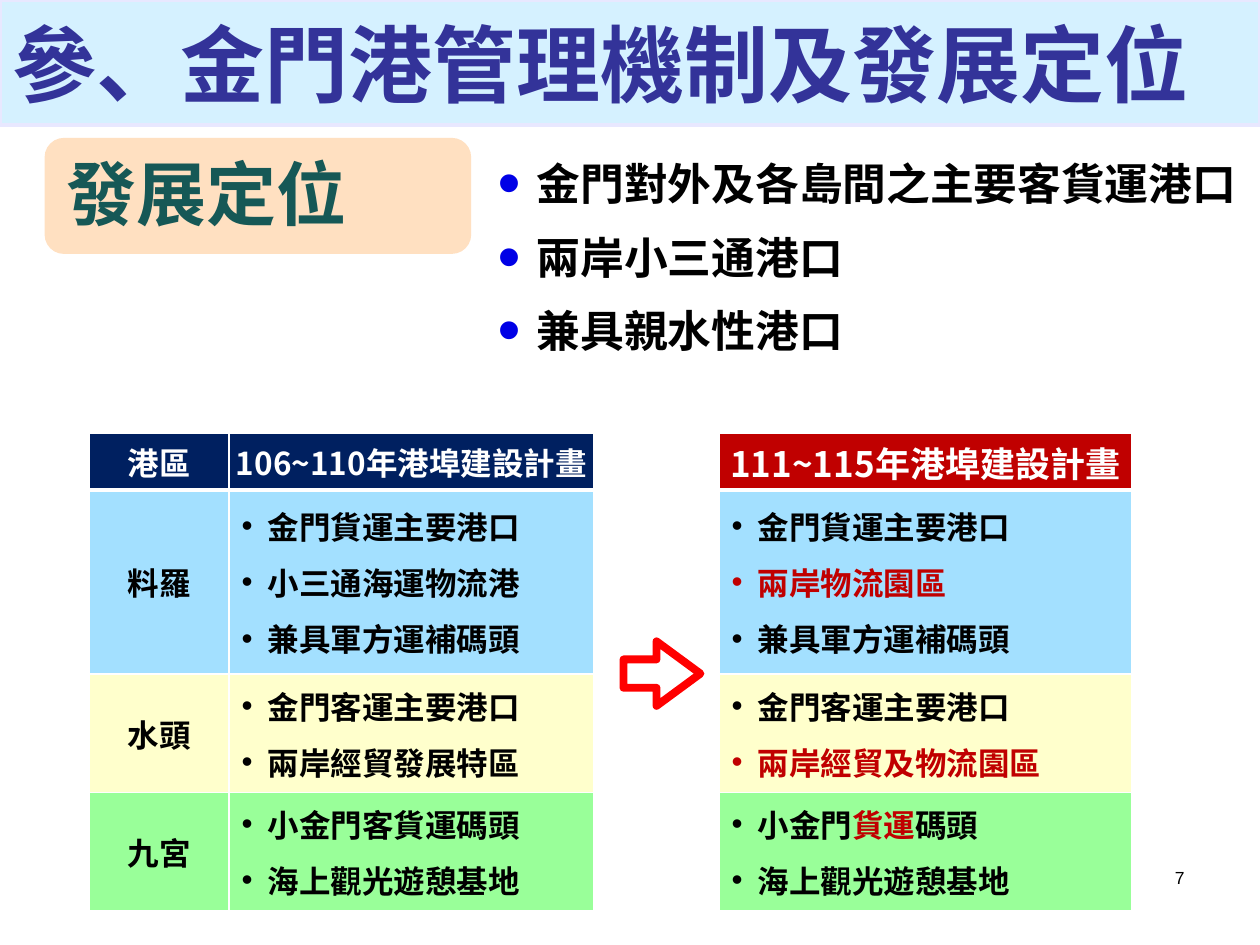
from lxml.etree import SubElement
from pptx import Presentation
from pptx.dml.color import RGBColor
from pptx.enum.shapes import MSO_SHAPE
from pptx.enum.text import MSO_ANCHOR, MSO_AUTO_SIZE, PP_ALIGN
from pptx.oxml.ns import qn
from pptx.util import Cm, Pt

COLORS = {
    "black": "000000", "white": "FFFFFF", "red": "C00000", "navy": "002060",
    "title": "333399", "banner": "66CCFF", "banner_edge": "E8E8FF",
    "heading": "165856", "orange": "FF9933", "bullet": "0000E6",
    "arrow": "FF0000", "blue": "A3E0FF", "yellow": "FFFFCC", "green": "99FF99",
}
CJK = "Noto Sans CJK SC"

PORTS = [
    ("料羅", "blue",
     ["金門貨運主要港口", "小三通海運物流港", "兼具軍方運補碼頭"],
     ["金門貨運主要港口", "*兩岸物流園區", "兼具軍方運補碼頭"]),
    ("水頭", "yellow",
     ["金門客運主要港口", "兩岸經貿發展特區"],
     ["金門客運主要港口", "*兩岸經貿及物流園區"]),
    ("九宮", "green",
     ["小金門客貨運碼頭", "海上觀光遊憩基地"],
     ["小金門*貨運*碼頭", "海上觀光遊憩基地"]),
]


class Deck:
    def __init__(self):
        self.prs = Presentation()
        self.prs.slide_width, self.prs.slide_height = Cm(25.4), Cm(19.05)
        self.slide = self.prs.slides.add_slide(self.prs.slide_layouts[1])

    def rgb(self, name):
        return RGBColor.from_string(COLORS[name])

    def place(self, shape, left, top, width, height):
        shape.left, shape.top = Cm(left), Cm(top)
        shape.width, shape.height = Cm(width), Cm(height)

    def fill(self, target, color, opacity=100):
        target.fill.solid()
        target.fill.fore_color.rgb = self.rgb(color)
        if opacity < 100:
            tint = target._element.spPr.find(qn("a:solidFill"))[0]
            SubElement(tint, qn("a:alpha"), val=str(opacity * 1000))

    def font(self, paragraph, size, color, bold=True, name=CJK):
        font = paragraph.font
        font.size, font.bold, font.name = Pt(size), bold, name
        font.color.rgb = self.rgb(color)
        defaults = paragraph._p.pPr.find(qn("a:defRPr"))
        SubElement(defaults, qn("a:ea"), typeface=name)

    def bullet(self, paragraph, margin, hang, color=None, percent=None):
        props = paragraph._p.get_or_add_pPr()
        props.set("marL", str(Cm(margin)))
        props.set("indent", str(-Cm(hang)))
        if color:
            tint = SubElement(props, qn("a:buClr"))
            SubElement(tint, qn("a:srgbClr"), val=COLORS[color])
        if percent:
            SubElement(props, qn("a:buSzPct"), val=str(percent * 1000))
        SubElement(props, qn("a:buFont"), typeface="Arial")
        SubElement(props, qn("a:buChar"), char="•")

    def title(self, text, box):
        banner = self.slide.shapes.title
        self.place(banner, *box)
        self.fill(banner, "banner", 27)
        banner.line.color.rgb = self.rgb("banner_edge")
        banner.line.width = Pt(2)
        frame = banner.text_frame
        frame.auto_size = MSO_AUTO_SIZE.NONE
        frame.vertical_anchor = MSO_ANCHOR.MIDDLE
        frame.text = text
        frame.paragraphs[0].alignment = PP_ALIGN.LEFT
        self.font(frame.paragraphs[0], 48, "title")

    def body(self, lines, box):
        roles = self.slide.placeholders[1]
        self.place(roles, *box)
        frame = roles.text_frame
        frame.auto_size = MSO_AUTO_SIZE.NONE
        frame.text = "\n".join(lines)
        for index, paragraph in enumerate(frame.paragraphs):
            paragraph.line_spacing = 1.3
            paragraph.space_before = Pt(3 if index else 0)
            self.bullet(paragraph, 2.06, 0.79, "bullet", 150)
            self.font(paragraph, 25, "black")

    def text(self, text, box, size, color, align=PP_ALIGN.LEFT, **style):
        label = self.slide.shapes.add_textbox(*map(Cm, box))
        label.text_frame.word_wrap = True
        label.text_frame.text = text
        paragraph = label.text_frame.paragraphs[0]
        paragraph.alignment = align
        self.font(paragraph, size, color, **style)

    def shape(self, preset, box, color, opacity=100, edge=None, adjust=()):
        figure = self.slide.shapes.add_shape(preset, *map(Cm, box))
        figure.shadow.inherit = False
        self.fill(figure, color, opacity)
        for index, value in enumerate(adjust):
            figure.adjustments[index] = value
        if edge:
            figure.line.color.rgb = self.rgb(edge)
            figure.line.width = Pt(4.5)
        else:
            figure.line.fill.background()

    def table(self, left, top, widths, heights):
        grid = self.slide.shapes.add_table(
            len(heights), len(widths), Cm(left), Cm(top),
            Cm(sum(widths)), Cm(sum(heights))).table
        for column, width in zip(grid.columns, widths):
            column.width = Cm(width)
        for row, height in zip(grid.rows, heights):
            row.height = Cm(height)
        for index, row in enumerate(grid.rows):
            for cell in row.cells:
                self.borders(cell, 1 if index != 1 else 3, 3 if index == 0 else 1)
                cell.fill.background()
        return grid

    def borders(self, cell, above, below):
        props = cell._tc.get_or_add_tcPr()
        for side, width in (("L", 1), ("R", 1), ("T", above), ("B", below)):
            edge = SubElement(props, qn(f"a:ln{side}"), w=str(Pt(width)))
            paint = SubElement(edge, qn("a:solidFill"))
            SubElement(paint, qn("a:srgbClr"), val=COLORS["white"])

    def cell(self, cell, lines, fill, color="black", size=18, listed=False):
        self.fill(cell, fill)
        cell.margin_left = cell.margin_right = Cm(0.02)
        cell.margin_top = cell.margin_bottom = 0
        cell.vertical_anchor = MSO_ANCHOR.MIDDLE
        frame = cell.text_frame
        for index, line in enumerate(lines):
            paragraph = frame.add_paragraph() if index else frame.paragraphs[0]
            if listed:
                paragraph.space_after = Pt(6)
                self.bullet(paragraph, 0.76, 0.53)
            else:
                paragraph.alignment = PP_ALIGN.CENTER
            self.font(paragraph, size, color)
            for order, part in enumerate(line.split("*")):
                if part:
                    run = paragraph.add_run()
                    run.text = part
                    if order % 2:
                        run.font.color.rgb = self.rgb("red")


def main():
    deck = Deck()
    deck.title("參、金門港管理機制及發展定位", (0, 0, 25.4, 2.52))
    deck.body(["金門對外及各島間之主要客貨運港口", "兩岸小三通港口", "兼具親水性港口"],
              (8.51, 2.72, 17.4, 7.01))
    deck.text("7", (18.21, 17.35, 5.92, 1.27), 10, "black", PP_ALIGN.RIGHT,
              bold=False, name="Arial")

    plans = deck.table(1.8, 8.74, (2.82, 7.34, 2.54, 8.31), (1.14, 3.71, 2.39, 2.39))
    deck.cell(plans.cell(0, 0), ["港區"], "navy", "white")
    deck.cell(plans.cell(0, 1), ["106~110年港埠建設計畫"], "navy", "white")
    deck.cell(plans.cell(0, 3), ["111~115年港埠建設計畫"], "red", "white", 20)
    for row, (port, fill, current, planned) in enumerate(PORTS, 1):
        deck.cell(plans.cell(row, 0), [port], fill)
        deck.cell(plans.cell(row, 1), current, fill, listed=True)
        deck.cell(plans.cell(row, 3), planned, fill, listed=True)

    deck.shape(MSO_SHAPE.ROUNDED_RECTANGLE, (0.9, 2.78, 8.6, 2.34), "orange", 30)
    deck.text("發展定位", (1.1, 2.92, 8.2, 1.96), 40, "heading")
    deck.shape(MSO_SHAPE.RIGHT_ARROW, (12.57, 12.93, 1.55, 1.3), "white",
               edge="arrow", adjust=(0.44, 0.68))
    deck.prs.save("out.pptx")


if __name__ == "__main__":
    main()
